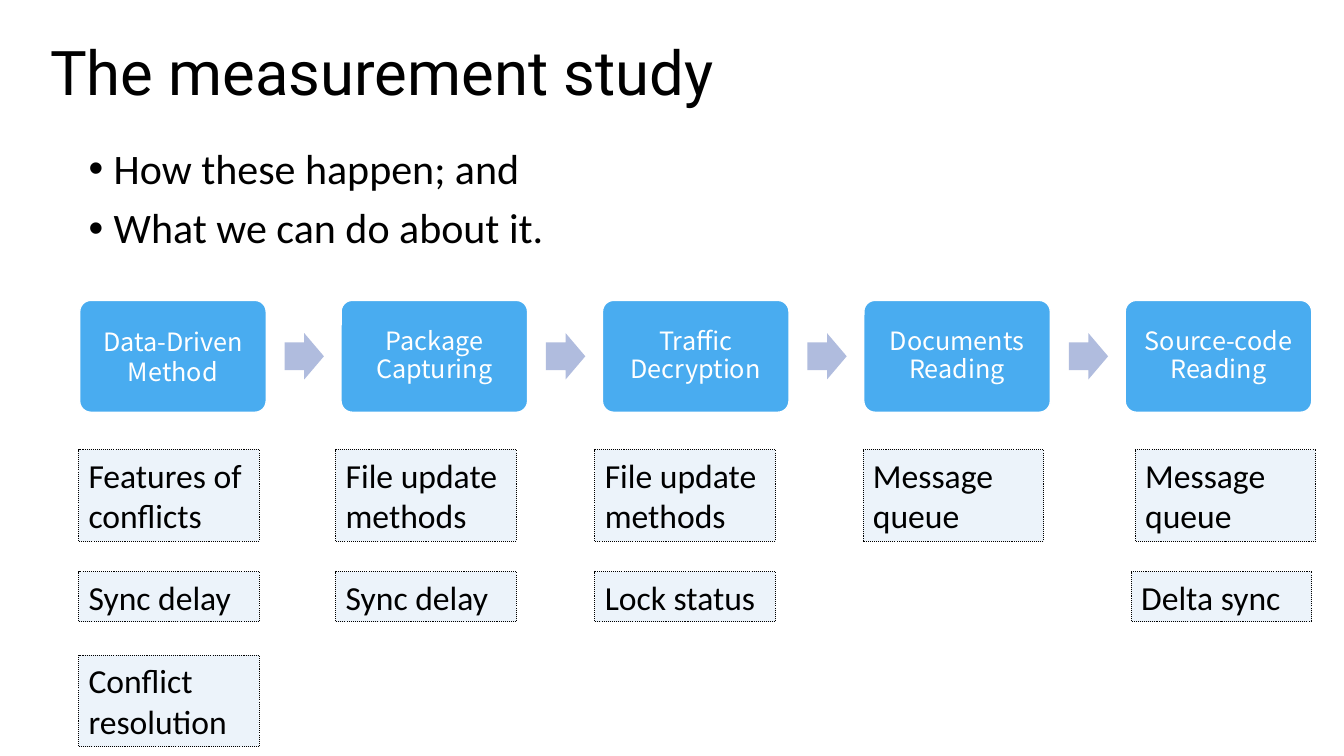
from dataclasses import dataclass

from lxml import etree
from pptx import Presentation
from pptx.dml.color import RGBColor
from pptx.enum.dml import MSO_LINE
from pptx.enum.shapes import MSO_SHAPE
from pptx.enum.text import MSO_ANCHOR, PP_ALIGN
from pptx.oxml.ns import qn
from pptx.util import Inches, Pt

BLANK_LAYOUT = 6
ROUNDED, ARROW, RECTANGLE = MSO_SHAPE.ROUNDED_RECTANGLE, MSO_SHAPE.RIGHT_ARROW, MSO_SHAPE.RECTANGLE
TOP, MIDDLE = MSO_ANCHOR.TOP, MSO_ANCHOR.MIDDLE
LEFT, CENTER = PP_ALIGN.LEFT, PP_ALIGN.CENTER
DOTTED = MSO_LINE.ROUND_DOT


@dataclass(frozen=True)
class Theme:
    """Colours, fonts and type sizes of the slide."""
    ink: str = "000000"
    paper: str = "FFFFFF"
    stage: str = "49ACF0"
    arrow: str = "B0BCDE"
    note: str = "DEEBF7"
    note_opacity: int = 57
    title_font: str = "Roboto"
    body_font: str = "Calibri"
    stage_font: str = "Noto Sans CJK SC"
    title_size: int = 44
    body_size: int = 30
    note_size: int = 24
    stage_size: int = 18


THEME = Theme()
STAGES = ["Data-Driven Method", "Package Capturing", "Traffic Decryption",
          "Documents Reading", "Source-code Reading"]
NOTE_ROWS = [
    (0, 0.91, [(0, "Features of conflicts"), (2.55, "File update methods"),
               (5.12, "File update methods"), (7.78, "Message queue"),
               (10.48, "Message queue")]),
    (1.21, 0.5, [(0, "Sync delay"), (2.55, "Sync delay"),
                 (5.12, "Lock status"), (10.44, "Delta sync")]),
    (2.04, 0.91, [(0, "Conflict resolution")]),
]


def set_all(target, values):
    """Set every attribute named in a dict of format values."""
    for name, value in values.items():
        setattr(target, name, value)


def write(shape, lines, size, font, color, anchor=TOP, align=LEFT, spacing=1.0, before=0, inset=None):
    """Fill a shape with formatted paragraphs and return them."""
    frame = shape.text_frame
    set_all(frame, {"word_wrap": True, "vertical_anchor": anchor})
    if inset is not None:
        sides = ("left", "right", "top", "bottom")
        set_all(frame, {f"margin_{side}": Inches(inset) for side in sides})
    frame.text = "\n".join(lines)
    for paragraph in frame.paragraphs:
        set_all(paragraph, {"alignment": align, "line_spacing": spacing, "space_before": Pt(before)})
        for run in paragraph.runs:
            set_all(run.font, {"size": Pt(size), "name": font})
            run.font.color.rgb = RGBColor.from_string(color)
    return frame.paragraphs


def add_box(slide, kind, box, fill, line=None, width=1, adjustments=()):
    """Add a filled preset shape without a shadow."""
    shape = slide.shapes.add_shape(kind, *map(Inches, box))
    shape.shadow.inherit = False
    shape.fill.solid()
    shape.fill.fore_color.rgb = RGBColor.from_string(fill)
    if line:
        shape.line.color.rgb = RGBColor.from_string(line)
        shape.line.width = Pt(width)
    else:
        shape.line.fill.background()
    for index, value in enumerate(adjustments):
        shape.adjustments[index] = value
    return shape


def add_title(slide, box, text):
    """Place the slide title."""
    shape = slide.shapes.add_textbox(*map(Inches, box))
    write(shape, [text], THEME.title_size, THEME.title_font, THEME.ink, MIDDLE, spacing=0.9)


def add_bullets(slide, box, lines):
    """Place the bulleted list."""
    shape = slide.shapes.add_textbox(*map(Inches, box))
    for paragraph in write(shape, lines, THEME.body_size, THEME.body_font,
                           THEME.ink, spacing=0.9, before=10):
        properties = paragraph._p.get_or_add_pPr()
        properties.set("marL", str(Inches(0.25)))
        properties.set("indent", str(Inches(-0.25)))
        etree.SubElement(properties, qn("a:buFont")).set("typeface", "Arial")
        etree.SubElement(properties, qn("a:buChar")).set("char", "•")


def add_process(slide, box, stages):
    """Place the stages in equal steps with an arrow in each gap."""
    left, top, width, height = box
    stage_width, arrow_width, arrow_height = 1.85, 0.39, 0.46
    step = (width - stage_width) / (len(stages) - 1)
    arrow_top = top + (height - arrow_height) / 2
    for index, label in enumerate(stages):
        x = left + index * step
        if index:
            add_box(slide, ARROW, (x - 0.56, arrow_top, arrow_width, arrow_height),
                    THEME.arrow, adjustments=(0.6, 0.5))
        stage = add_box(slide, ROUNDED, (x, top, stage_width, height),
                        THEME.stage, THEME.paper, adjustments=(0.1,))
        write(stage, [label], THEME.stage_size, THEME.stage_font, THEME.paper,
              MIDDLE, CENTER, spacing=0.9 if index else 1.0, inset=0.1)


def add_notes(slide, origin, rows):
    """Place the rows of dotted notes under the stages."""
    left, top = origin
    for offset, height, notes in rows:
        for x, text in notes:
            note = add_box(slide, RECTANGLE, (left + x, top + offset, 1.79, height),
                           THEME.note, THEME.ink, 0.75)
            note.line.dash_style = DOTTED
            color = note.fill._xPr.find(".//" + qn("a:srgbClr"))
            etree.SubElement(color, qn("a:alpha")).set("val", str(THEME.note_opacity * 1000))
            write(note, [text], THEME.note_size, THEME.body_font, THEME.ink)


def build_study_slide(presentation):
    """Build the measurement study slide."""
    slide = presentation.slides.add_slide(presentation.slide_layouts[BLANK_LAYOUT])
    add_title(slide, (0.4, 0.29, 11.5, 0.91), "The measurement study")
    add_bullets(slide, (0.78, 1.42, 12.27, 1.23),
                ["How these happen; and", "What we can do about it."])
    add_process(slide, (0.79, 2.98, 12.22, 1.11), STAGES)
    add_notes(slide, (0.78, 4.46), NOTE_ROWS)


def main():
    """Create and save the presentation."""
    presentation = Presentation()
    set_all(presentation, {"slide_width": Inches(13.33), "slide_height": Inches(7.5)})
    build_study_slide(presentation)
    presentation.save("out.pptx")


if __name__ == "__main__":
    main()
